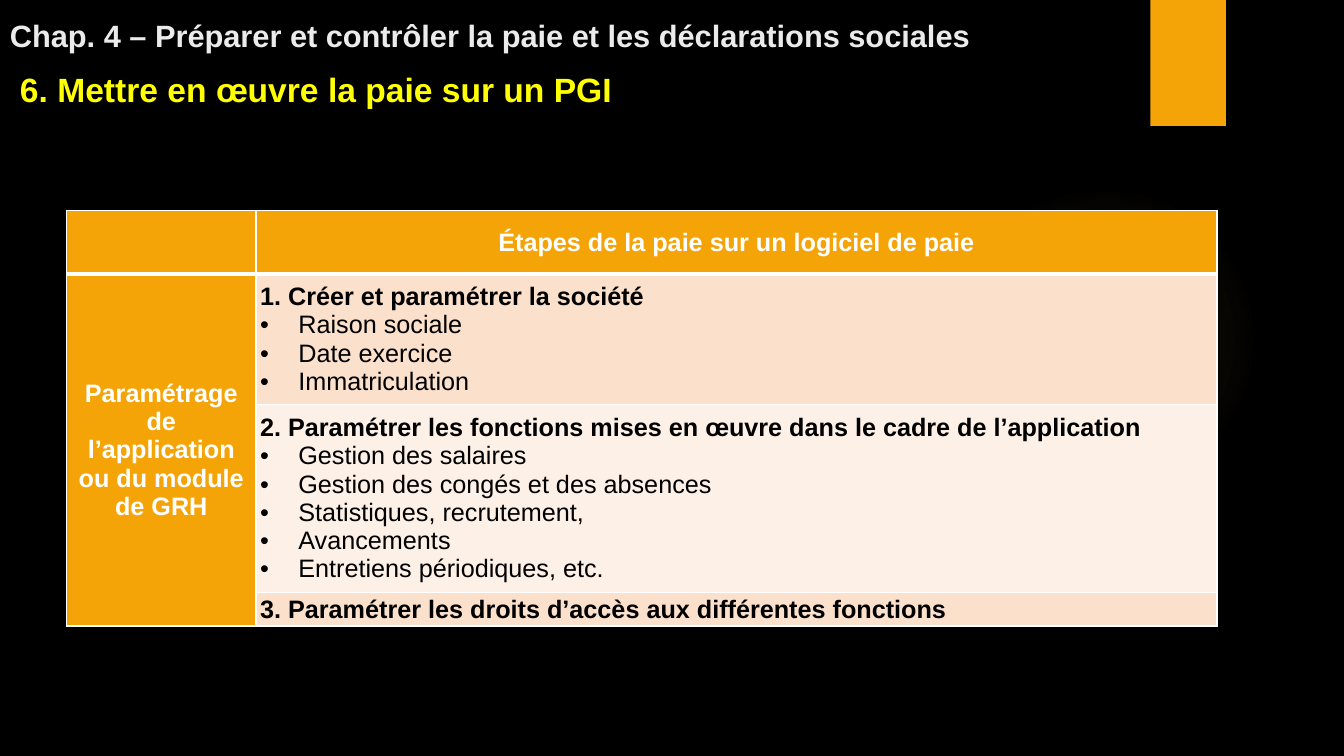
from dataclasses import dataclass

import lxml.etree
import pptx
import pptx.dml.color
import pptx.enum.shapes
import pptx.enum.text
import pptx.oxml
import pptx.oxml.ns
import pptx.util

Inches = pptx.util.Inches
Align = pptx.enum.text.PP_ALIGN
Anchor = pptx.enum.text.MSO_ANCHOR
Preset = pptx.enum.shapes.MSO_SHAPE
qn = pptx.oxml.ns.qn


@dataclass(frozen=True)
class Theme:
    font: str = "Arial"
    background: str = "000000"
    accent: str = "F5A408"
    glow: str = "FAC96A"
    chapter: str = "EBEBEB"
    section: str = "FFFF00"
    white: str = "FFFFFF"
    black: str = "000000"
    dark_band: str = "FBE0CC"
    light_band: str = "FDF0E7"
    chapter_size: int = 22
    section_size: int = 24
    table_size: int = 18


@dataclass(frozen=True)
class Heading:
    text: str
    left: float
    top: float
    width: float
    height: float
    size: int
    color: str
    anchor: Anchor


@dataclass(frozen=True)
class Step:
    title: str
    items: tuple[str, ...]
    height: float
    fill: str


THEME = Theme()
HEADINGS = (
    Heading("Chap. 4 – Préparer et contrôler la paie et les déclarations sociales",
            0, -0.02, 12.72, 0.6, THEME.chapter_size, THEME.chapter, Anchor.BOTTOM),
    Heading("6. Mettre en œuvre la paie sur un PGI",
            0.1, 0.63, 8.27, 0.5, THEME.section_size, THEME.section, Anchor.TOP),
)
STEPS = (
    Step("1. Créer et paramétrer la société",
         ("Raison sociale", "Date exercice", "Immatriculation"), 1.29, THEME.dark_band),
    Step("2. Paramétrer les fonctions mises en œuvre dans le cadre de l’application",
         ("Gestion des salaires", "Gestion des congés et des absences",
          "Statistiques, recrutement,", "Avancements", "Entretiens périodiques, etc."),
         1.87, THEME.light_band),
    Step("3. Paramétrer les droits d’accès aux différentes fonctions", (), 0.33, THEME.dark_band),
)
HEADER_HEIGHT = 0.63
COLUMN_WIDTHS = (1.88, 9.53)
THIN, THICK = 1, 3


def rgb(color: str) -> pptx.dml.color.RGBColor:
    return pptx.dml.color.RGBColor.from_string(color)


def style_font(font, size: int, color: str, bold: bool = True) -> None:
    font.name = THEME.font
    font.size = pptx.util.Pt(size)
    font.bold = bold
    font.color.rgb = rgb(color)


def add_plain_shape(slide, preset: Preset, left: float, top: float, width: float, height: float):
    shape = slide.shapes.add_shape(preset, Inches(left), Inches(top), Inches(width), Inches(height))
    shape.shadow.inherit = False
    shape.line.fill.background()
    shape.fill.solid()
    return shape


def add_glow(slide) -> None:
    """Add the faint disc that fades out from its centre."""
    disc = add_plain_shape(slide, Preset.OVAL, 9.41, 1.83, 3.08, 3.08)
    stops = "".join(
        f'<a:gs pos="{position * 1000}"><a:srgbClr val="{THEME.glow}">'
        f'<a:alpha val="{alpha * 1000}"/></a:srgbClr></a:gs>'
        for position, alpha in ((0, 7), (36, 6), (69, 0), (100, 0)))
    gradient = pptx.oxml.parse_xml(
        f'<a:gradFill {pptx.oxml.ns.nsdecls("a")}><a:gsLst>{stops}</a:gsLst>'
        '<a:path path="circle"><a:fillToRect l="50000" t="50000" r="50000" b="50000"/></a:path>'
        '</a:gradFill>')
    properties = disc.fill._xPr
    properties.replace(properties.find(qn("a:solidFill")), gradient)


def add_heading(slide, heading: Heading) -> None:
    box = slide.shapes.add_textbox(Inches(heading.left), Inches(heading.top),
                                   Inches(heading.width), Inches(heading.height))
    frame = box.text_frame
    frame.word_wrap = True
    frame.vertical_anchor = heading.anchor
    frame.text = heading.text
    style_font(frame.paragraphs[0].runs[0].font, heading.size, heading.color)


def set_borders(cell, top: int, bottom: int) -> None:
    properties = cell._tc.get_or_add_tcPr()
    sides = (("L", THIN), ("R", THIN), ("T", top), ("B", bottom))
    for index, (side, width) in enumerate(sides):
        line = lxml.etree.Element(qn(f"a:ln{side}"), w=str(pptx.util.Pt(width)))
        fill = lxml.etree.SubElement(line, qn("a:solidFill"))
        lxml.etree.SubElement(fill, qn("a:srgbClr"), val=THEME.white)
        properties.insert(index, line)


def prepare_cell(cell, fill: str, row: int) -> None:
    cell.fill.solid()
    cell.fill.fore_color.rgb = rgb(fill)
    cell.vertical_anchor = Anchor.MIDDLE
    cell.margin_left = cell.margin_right = Inches(0.04)
    cell.margin_top = cell.margin_bottom = 0
    set_borders(cell, THICK if row == 1 else THIN, THICK if row == 0 else THIN)


def write_label(cell, text: str, spacing: int) -> None:
    cell.text_frame.text = text
    para = cell.text_frame.paragraphs[0]
    para.alignment = Align.CENTER
    para.space_after = pptx.util.Pt(spacing)
    style_font(para.runs[0].font, THEME.table_size, THEME.white)


def add_bullet(para) -> None:
    properties = para._p.get_or_add_pPr()
    properties.set("marL", str(Inches(0.38)))
    properties.set("indent", str(-Inches(0.38)))
    lxml.etree.SubElement(properties, qn("a:buFont"), typeface=THEME.font)
    lxml.etree.SubElement(properties, qn("a:buChar"), char="•")


def write_step(cell, step: Step) -> None:
    frame = cell.text_frame
    frame.text = "\n".join((step.title, *step.items))
    for index, para in enumerate(frame.paragraphs):
        para.alignment = Align.JUSTIFY
        if index > 0:
            add_bullet(para)
        style_font(para.runs[0].font, THEME.table_size, THEME.black, bold=index == 0)


def add_steps_table(slide) -> None:
    heights = (HEADER_HEIGHT, *(step.height for step in STEPS))
    table = slide.shapes.add_table(
        len(heights), len(COLUMN_WIDTHS), Inches(0.66), Inches(2.09),
        Inches(sum(COLUMN_WIDTHS)), Inches(sum(heights))).table
    for column, width in zip(table.columns, COLUMN_WIDTHS):
        column.width = Inches(width)
    for index, height in enumerate(heights):
        table.rows[index].height = Inches(height)
        prepare_cell(table.cell(index, 0), THEME.accent, index)
        prepare_cell(table.cell(index, 1), STEPS[index - 1].fill if index else THEME.accent, index)
    table.cell(1, 0).merge(table.cell(len(STEPS), 0))
    write_label(table.cell(0, 1), "Étapes de la paie sur un logiciel de paie", 6)
    write_label(table.cell(1, 0), "Paramétrage de l’application ou du module de GRH", 3)
    for row, step in enumerate(STEPS, start=1):
        write_step(table.cell(row, 1), step)


def main() -> None:
    deck = pptx.Presentation()
    deck.slide_width, deck.slide_height = Inches(13.33), Inches(7.5)
    page = deck.slides.add_slide(deck.slide_layouts[6])
    page.background.fill.solid()
    page.background.fill.fore_color.rgb = rgb(THEME.background)
    add_glow(page)
    tab = add_plain_shape(page, Preset.RECTANGLE, 11.41, 0, 0.75, 1.25)
    tab.fill.fore_color.rgb = rgb(THEME.accent)
    for heading in HEADINGS:
        add_heading(page, heading)
    add_steps_table(page)
    deck.save("out.pptx")


if __name__ == "__main__":
    main()
